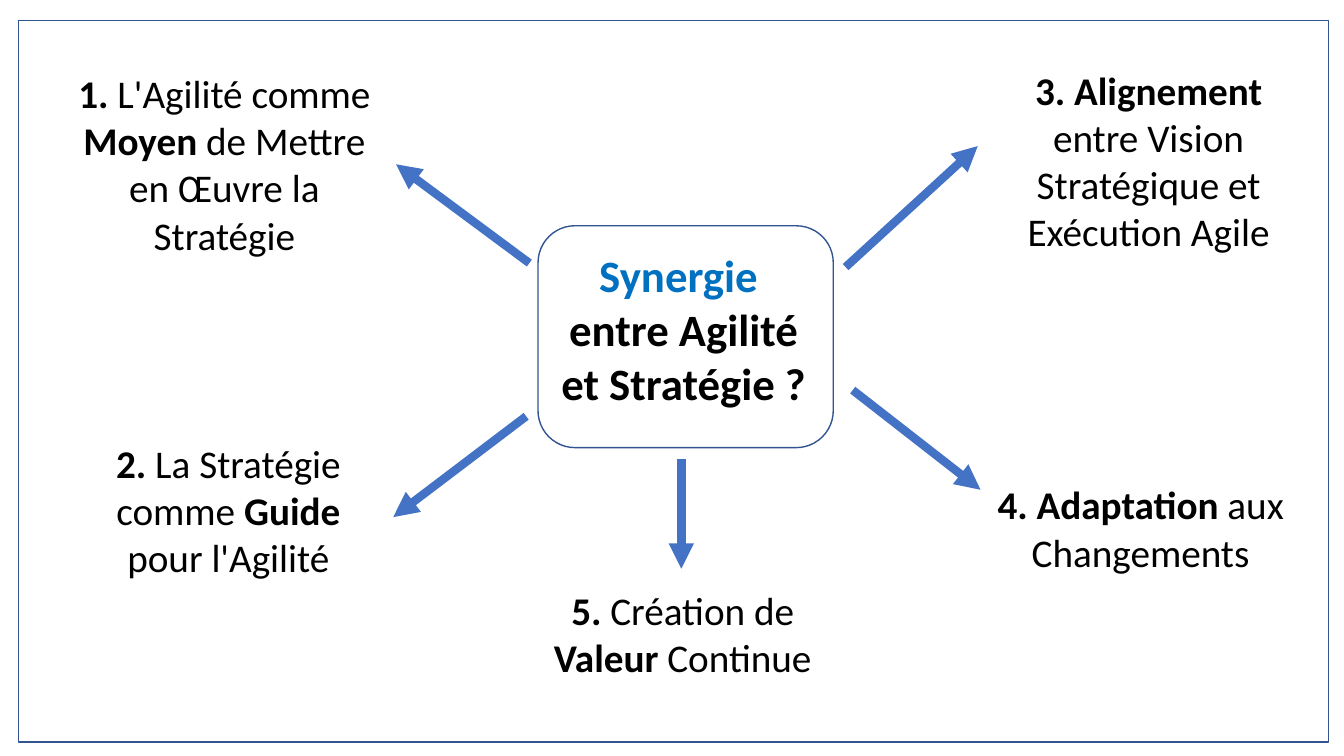
"""Build a slide on the synergy between agility and strategy."""
import pptx
import pptx.util
import pptx.dml.color
import pptx.enum.shapes
import pptx.enum.text
import pptx.oxml
import pptx.oxml.ns

Cm, Pt = pptx.util.Cm, pptx.util.Pt
Color = pptx.dml.color.RGBColor
Kind = pptx.enum.shapes.MSO_SHAPE


class Theme:
    font = "Calibri"
    ink = Color.from_string("000000")
    accent = Color.from_string("0070C0")
    border = Color.from_string("325491")
    arrow = Color.from_string("4472C4")
    title = Pt(32)
    label = Pt(28)
    thin = Pt(1)
    thick = Pt(6)


def write(area, parts, size):
    box = slide.shapes.add_textbox(*map(Cm, area))
    frame = box.text_frame
    frame.word_wrap = True
    frame.auto_size = pptx.enum.text.MSO_AUTO_SIZE.SHAPE_TO_FIT_TEXT
    for row, runs in enumerate(parts):
        para = frame.add_paragraph() if row else frame.paragraphs[0]
        para.alignment = pptx.enum.text.PP_ALIGN.CENTER
        for text, bold, color in runs:
            run = para.add_run()
            run.text = text
            run.font.name = Theme.font
            run.font.size = size
            run.font.bold = bold
            run.font.color.rgb = color


def outline(kind, area):
    shape = slide.shapes.add_shape(kind, *map(Cm, area))
    shape.shadow.inherit = False
    shape.fill.background()
    shape.line.color.rgb = Theme.border
    shape.line.width = Theme.thin


deck = pptx.Presentation()
deck.slide_width, deck.slide_height = Cm(33.87), Cm(19.05)
slide = deck.slides.add_slide(deck.slide_layouts[6])

outline(Kind.RECTANGLE, (0.46, 0.51, 33.02, 18.19))
outline(Kind.ROUNDED_RECTANGLE, (13.56, 5.69, 7.44, 5.59))
write((13.61, 6.12, 7.24, 4.37), [
    [("Synergie ", True, Theme.accent)],
    [("entre Agilité et Stratégie ?", True, Theme.ink)],
], Theme.title)

arrows = [
    (13.34, 6.63, 9.98, 4.14),
    (13.26, 10.49, 9.91, 13.03),
    (17.17, 11.56, 17.17, 14.33),
    (21.31, 6.73, 24.64, 3.68),
    (21.49, 9.83, 24.71, 12.34),
]
for ends in arrows:
    arrow = slide.shapes.add_connector(
        pptx.enum.shapes.MSO_CONNECTOR.STRAIGHT, *map(Cm, ends))
    arrow.line.color.rgb = Theme.arrow
    arrow.line.width = Theme.thick
    head = pptx.oxml.parse_xml(
        f'<a:tailEnd {pptx.oxml.ns.nsdecls("a")} type="triangle"/>')
    arrow.line._get_or_add_ln().append(head)
    flat = pptx.oxml.parse_xml(
        f'<a:effectLst {pptx.oxml.ns.nsdecls("a")}/>')
    arrow._element.spPr.append(flat)

labels = [
    (1.68, 1.63, 5.05, ["1. ", "L'Agilité comme ", "Moyen",
                        " de Mettre en Œuvre la Stratégie"]),
    (1.78, 10.95, 3.84, ["2. ", "La Stratégie comme ", "Guide",
                         " pour l'Agilité"]),
    (24.97, 1.55, 5.05, ["3. Alignement",
                         " entre Vision Stratégique et Exécution Agile"]),
    (24.77, 11.99, 2.64, ["4. Adaptation", " aux Changements"]),
    (13.23, 14.66, 2.64, ["5. ", "Création de ", "Valeur", " Continue"]),
]
for left, top, height, texts in labels:
    runs = [(text, spot % 2 == 0, Theme.ink)
            for spot, text in enumerate(texts)]
    write((left, top, 7.95, height), [runs], Theme.label)

deck.save("out.pptx")
